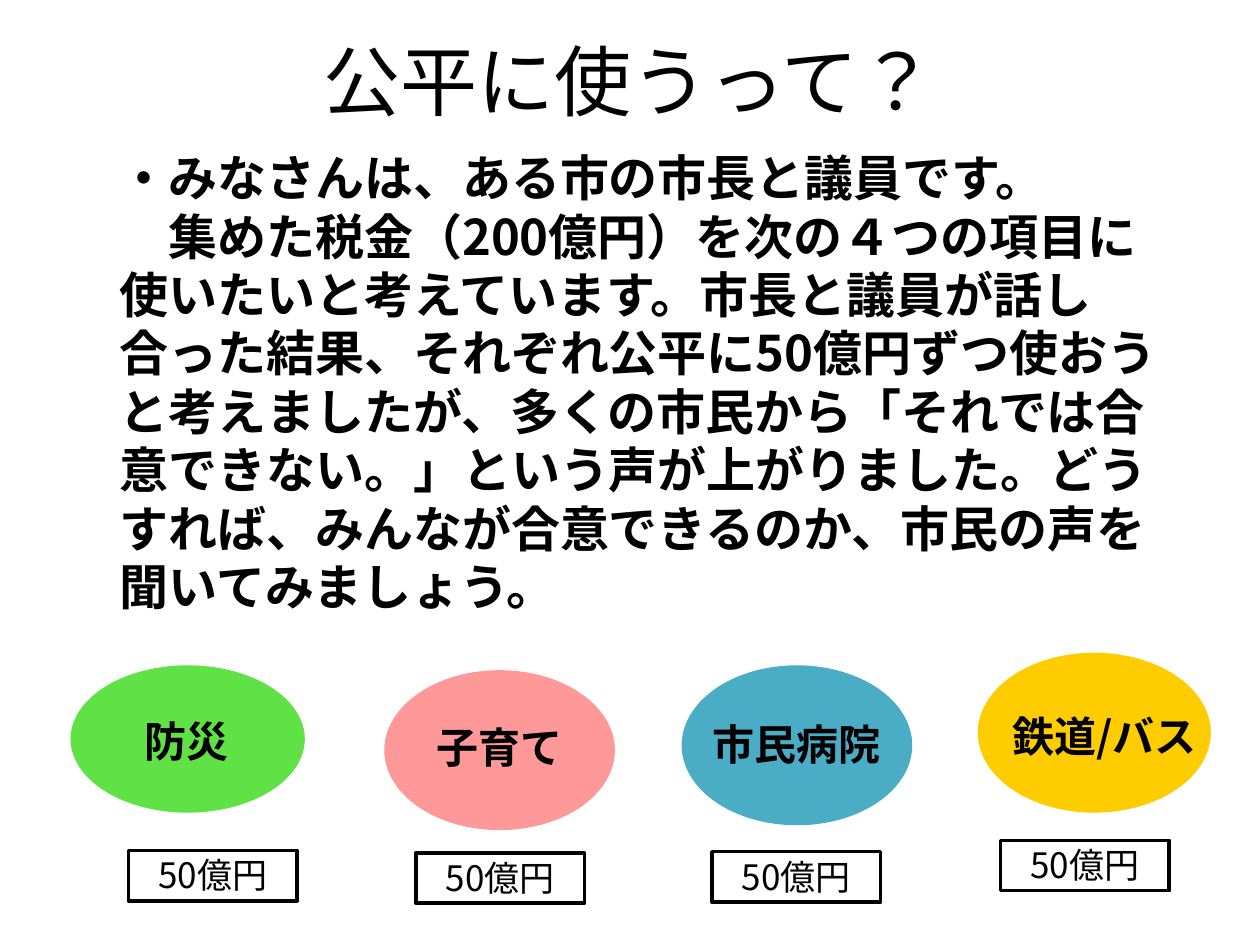
import pptx
import pptx.util
import pptx.dml.color
import pptx.enum.shapes
import pptx.enum.text
import pptx.oxml.ns
import lxml.etree
from dataclasses import dataclass

Pt = pptx.util.Pt
RGB = pptx.dml.color.RGBColor.from_string
Kind = pptx.enum.shapes.MSO_SHAPE
Align = pptx.enum.text.PP_ALIGN
Anchor = pptx.enum.text.MSO_ANCHOR
Fit = pptx.enum.text.MSO_AUTO_SIZE


@dataclass
class Theme:
    font: str = "Noto Sans CJK JP"
    ink: str = "000000"
    paper: str = "FFFFFF"
    green: str = "60E146"
    pink: str = "FF9999"
    blue: str = "4BACC6"
    gold: str = "FFCC00"
    title: int = 44
    body: int = 28
    topic: int = 24
    tag: int = 20


def apply(target, values):
    for name, value in values.items():
        setattr(target, name, value)


def place(shape, box):
    names = ("left", "top", "width", "height")
    apply(shape, dict(zip(names, map(Pt, box))))


class Page:
    def __init__(self, slide, theme):
        self.slide, self.theme = slide, theme

    def label(self, shape, lines, size, bold=False, inset=None, frame=None, para=None):
        """Fill the shape with one paragraph per line, in the theme font."""
        text = shape.text_frame
        apply(text, {"word_wrap": True, "auto_size": Fit.NONE, **(frame or {})})
        if inset is not None:
            sides = ("left", "top", "right", "bottom")
            apply(text, {f"margin_{side}": Pt(inset) for side in sides})
        for i, line in enumerate(lines):
            item = text.paragraphs[0] if i == 0 else text.add_paragraph()
            apply(item, para or {})
            run = item.add_run()
            run.text = line
            apply(run.font, {"name": self.theme.font, "size": Pt(size), "bold": bold})
            run.font.color.rgb = RGB(self.theme.ink)
            props = run._r.get_or_add_rPr()
            props.set("lang", "ja-JP")
            east = lxml.etree.SubElement(props, pptx.oxml.ns.qn("a:ea"))
            east.set("typeface", self.theme.font)

    def title(self, text, box):
        shape = self.slide.shapes.title
        place(shape, box)
        self.label(shape, [text], self.theme.title,
                   frame={"vertical_anchor": Anchor.MIDDLE},
                   para={"alignment": Align.CENTER})

    def body(self, lines, box):
        shape = self.slide.placeholders[1]
        place(shape, box)
        self.label(shape, lines, self.theme.body, bold=True,
                   para={"line_spacing": Pt(33.4), "space_before": Pt(0)})
        for item in shape.text_frame.paragraphs:
            props = item._p.get_or_add_pPr()
            for name in ("marL", "indent"):
                props.set(name, "0")
            lxml.etree.SubElement(props, pptx.oxml.ns.qn("a:buNone"))

    def shape(self, shapes, kind, box, fill, line=None):
        shape = shapes.add_shape(kind, *map(Pt, box))
        shape.shadow.inherit = False
        shape.fill.solid()
        shape.fill.fore_color.rgb = RGB(fill)
        if line:
            shape.line.color.rgb = RGB(line)
            shape.line.width = Pt(2)
        else:
            shape.line.fill.background()
        return shape

    def topic(self, text, fill, oval, area):
        """Group an oval with the label that lies on it."""
        group = self.slide.shapes.add_group_shape()
        self.shape(group.shapes, Kind.OVAL, oval, fill)
        self.label(group.shapes.add_textbox(*map(Pt, area)), [text],
                   self.theme.topic, bold=True, inset=1.4,
                   frame={"vertical_anchor": Anchor.MIDDLE, "word_wrap": False},
                   para={"alignment": Align.CENTER, "line_spacing": 0.9})

    def tag(self, text, left, top):
        box = (left, top, 96.5, 28.8)
        shape = self.shape(self.slide.shapes, Kind.RECTANGLE, box,
                           self.theme.paper, self.theme.ink)
        self.label(shape, [text], self.theme.tag, inset=0,
                   frame={"vertical_anchor": Anchor.TOP},
                   para={"alignment": Align.CENTER, "line_spacing": Pt(26)})


def main():
    deck = pptx.Presentation()
    apply(deck, {"slide_width": Pt(720), "slide_height": Pt(540)})
    theme = Theme()
    page = Page(deck.slides.add_slide(deck.slide_layouts[1]), theme)

    page.title("公平に使うって？", (0, 0, 720, 91.4))
    page.body([
        "・みなさんは、ある市の市長と議員です。",
        "　集めた税金（200億円）を次の４つの項目に使いたいと考えています。"
        "市長と議員が話し合った結果、それぞれ公平に50億円ずつ使おうと考えましたが、"
        "多くの市民から「それでは合意できない。」という声が上がりました。"
        "どうすれば、みんなが合意できるのか、市民の声を聞いてみましょう。",
    ], (61.2, 81, 614.2, 278.6))

    # name, fill, oval, label area, left and top of the tag
    topics = [
        ("防災", theme.green, (40.3, 380.2, 133.9, 84.2),
         (39.6, 398.2, 133.9, 54), (73.4, 486)),
        ("子育て", theme.pink, (219.6, 383, 131.8, 91.4),
         (239, 396.7, 92.9, 64.1), (237.6, 487.4)),
        ("市民病院", theme.blue, (389.5, 380.2, 131.8, 91.4),
         (403.9, 393.8, 102.2, 65.5), (406.8, 486.7)),
        ("鉄道/バス", theme.gold, (558.7, 373, 133.2, 91.4),
         (580.3, 391, 101.5, 61.9), (571.7, 480.2)),
    ]
    for name, fill, oval, area, spot in topics:
        page.topic(name, fill, oval, area)
        page.tag("50億円", *spot)

    deck.save("out.pptx")


if __name__ == "__main__":
    main()
